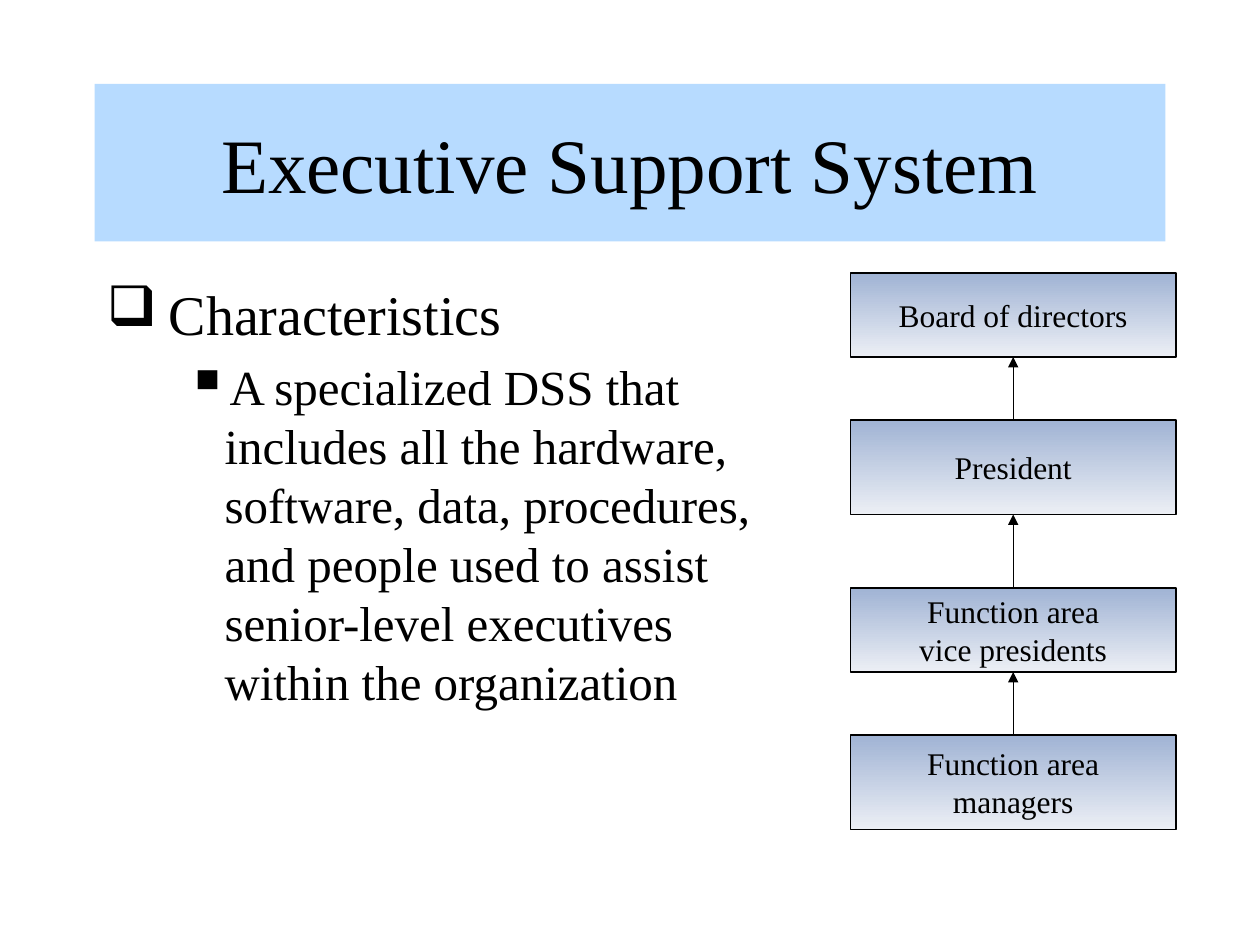
from itertools import pairwise

from pptx import Presentation
from pptx.dml.color import RGBColor
from pptx.enum.shapes import MSO_CONNECTOR, MSO_SHAPE
from pptx.enum.text import MSO_ANCHOR as Anchor, PP_ALIGN as Align
from pptx.oxml.ns import qn
from pptx.util import Pt
from lxml.etree import SubElement

PX = 7620  # EMU per px, 120 px to the inch
FONT = "Times New Roman"
BLACK = RGBColor(0x00, 0x00, 0x00)
TITLE_BLUE = RGBColor(0xB7, 0xDB, 0xFF)
BOX_TOP = RGBColor(0xA0, 0xB3, 0xD4)
BOX_BOTTOM = RGBColor(0xEC, 0xEF, 0xF5)

# text, level, size, bullet, bullet size in %, left margin, hanging indent
POINTS = [
    ("Characteristics", 0, 32, "❑", 100, 59, 59),
    ("A specialized DSS that includes all the hardware, software, data, "
     "procedures, and people used to assist senior-level executives within "
     "the organization", 1, 28, "▪", 120, 112, 37),
]
# text, offset from the top of the chain, height
ROLES = [
    ("Board of directors", 0, 80),
    ("President", 140, 90),
    ("Function area\nvice presidents", 300, 80),
    ("Function area\nmanagers", 440, 90),
]


def emu(*lengths):
    return [length * PX for length in lengths]


def set_font(paragraph, size):
    font = paragraph.font
    font.name, font.size = FONT, Pt(size)
    font.color.rgb = BLACK


def add_bullet(paragraph, char, percent, margin, hanging):
    props = paragraph._p.get_or_add_pPr()
    props.set("marL", str(margin * PX))
    props.set("indent", str(-hanging * PX))
    color = SubElement(props, qn("a:buClr"))
    SubElement(color, qn("a:srgbClr"), val=str(BLACK))
    SubElement(props, qn("a:buSzPct"), val=str(percent * 1000))
    SubElement(props, qn("a:buChar"), char=char)


def place_title(slide, left, top, width, height):
    title = slide.shapes.title
    title.left, title.top, title.width, title.height = emu(left, top, width, height)
    title.fill.solid()
    title.fill.fore_color.rgb = TITLE_BLUE
    frame = title.text_frame
    frame.text = "Executive Support System"
    frame.vertical_anchor = Anchor.MIDDLE
    heading = frame.paragraphs[0]
    heading.alignment = Align.CENTER
    set_font(heading, 44)


def add_points(slide, left, top, width, height):
    frame = slide.shapes.add_textbox(*emu(left, top, width, height)).text_frame
    frame.word_wrap = True
    for i, (text, level, size, char, percent, margin, hanging) in enumerate(POINTS):
        point = frame.add_paragraph() if i else frame.paragraphs[0]
        point.text = text
        point.level = level
        add_bullet(point, char, percent, margin, hanging)
        set_font(point, size)
        if i:
            point.space_before = Pt(6)


def add_role(slide, text, left, top, width, height):
    role = slide.shapes.add_shape(MSO_SHAPE.RECTANGLE, *emu(left, top, width, height))
    role.shadow.inherit = False
    role.fill.gradient()
    role.fill.gradient_angle = 270
    for stop, color, position in zip(role.fill.gradient_stops, (BOX_TOP, BOX_BOTTOM), (0, 1)):
        stop.color.rgb = color
        stop.position = position
    role.line.color.rgb = BLACK
    role.line.width = Pt(0.75)
    frame = role.text_frame
    frame.word_wrap = False
    frame.vertical_anchor = Anchor.MIDDLE
    label = frame.paragraphs[0]
    label.text = text
    label.alignment = Align.CENTER
    set_font(label, 18)
    return role


def add_arrow(slide, lower, upper):
    arrow = slide.shapes.add_connector(MSO_CONNECTOR.STRAIGHT, 0, 0, 0, 0)
    arrow.begin_connect(lower, 0)
    arrow.end_connect(upper, 2)
    arrow.line.color.rgb = BLACK
    arrow.line.width = Pt(0.75)
    SubElement(arrow.line._get_or_add_ln(), qn("a:tailEnd"), type="triangle")
    SubElement(arrow._element.spPr, qn("a:effectLst"))


def add_reporting_chain(slide, left, top, width):
    roles = [add_role(slide, text, left, top + offset, width, height)
             for text, offset, height in ROLES]
    # Each role reports to the one above
    for upper, lower in pairwise(roles):
        add_arrow(slide, lower, upper)


def main():
    deck = Presentation()
    deck.slide_width, deck.slide_height = emu(1200, 900)
    slide = deck.slides.add_slide(deck.slide_layouts[5])
    place_title(slide, 90, 80, 1020, 150)
    add_points(slide, 90, 260, 690, 540)
    add_reporting_chain(slide, 810, 260, 310)
    deck.save("out.pptx")


if __name__ == "__main__":
    main()
